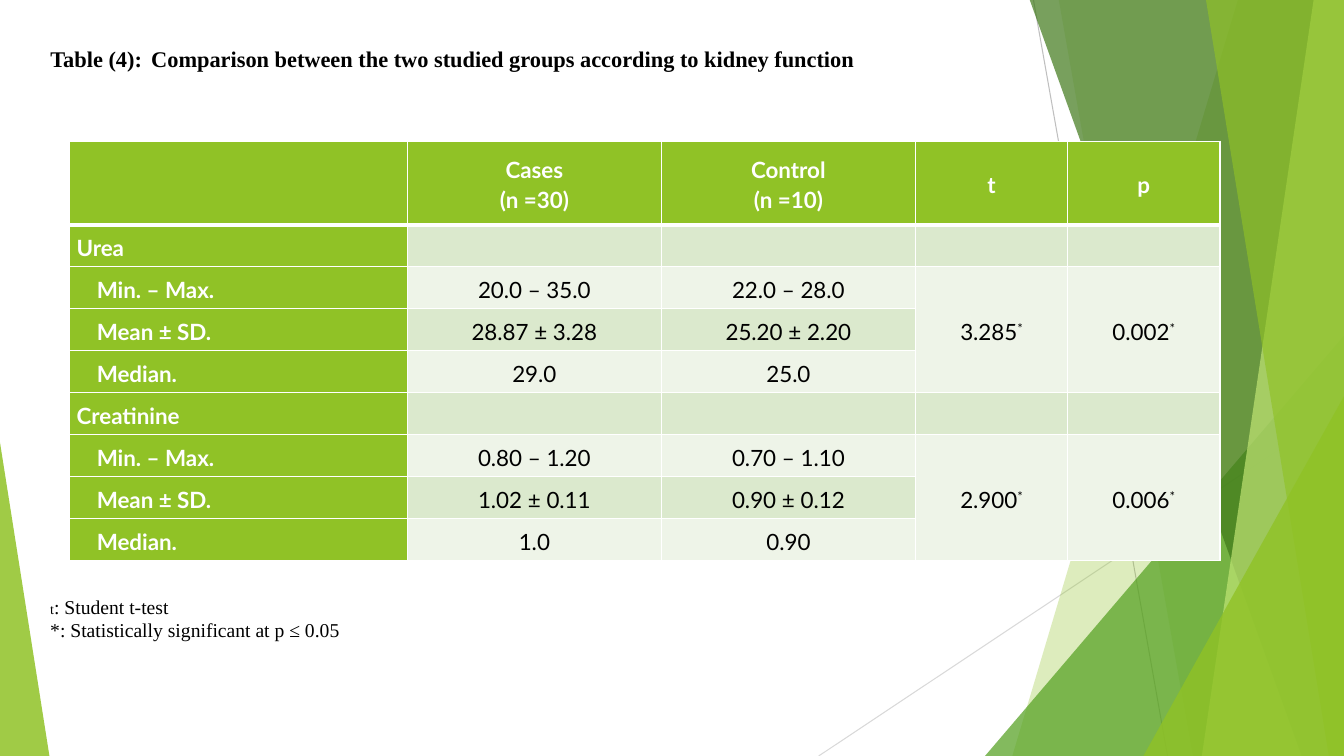
import pptx
import pptx.dml.color
import pptx.enum.shapes
import pptx.enum.text
import pptx.oxml
import pptx.oxml.ns
import pptx.util

Inches = pptx.util.Inches
Pt = pptx.util.Pt
ALIGN = pptx.enum.text.PP_ALIGN
MIDDLE = pptx.enum.text.MSO_ANCHOR.MIDDLE
SHAPES = pptx.enum.shapes.MSO_SHAPE

COLORS = {
    "green": "90C226", "leaf": "54A021", "forest": "3F7819", "lime": "C0E474",
    "band": "DBE9CD", "pale": "EEF4E8", "white": "FFFFFF", "black": "000000",
    "grey": "BFBFBF", "silver": "D9D9D9",
}
SERIF = {"name": "Times New Roman", "size": Pt(16), "bold": True}
NOTE = {"name": "Times New Roman", "size": Pt(14), "bold": False}
HEADING = {"name": "Lato", "size": Pt(16), "bold": True}
VALUE = {**HEADING, "bold": False}
CELL_SPACING = {"line_spacing": 1.15, "space_before": Pt(4), "space_after": Pt(2)}
CELL_FRAME = {
    "vertical_anchor": MIDDLE, "margin_left": Inches(0.07),
    "margin_right": Inches(0.07), "margin_top": 0, "margin_bottom": 0,
}


def apply(target, values):
    for name, value in values.items():
        setattr(target, name, value)


def rgb(color):
    return pptx.dml.color.RGBColor.from_string(COLORS[color])


class SlideBuilder:
    def __init__(self, page):
        self.page = page

    def line(self, start, end, color):
        connector = self.page.shapes.add_connector(
            pptx.enum.shapes.MSO_CONNECTOR.STRAIGHT,
            *(Inches(value) for value in (*start, *end)))
        connector.line.width = Pt(0.75)
        connector.line.color.rgb = rgb(color)
        pptx.oxml.ns.qn("a:effectLst")
        connector._element.spPr.append(pptx.oxml.parse_xml(
            f'<a:effectLst {pptx.oxml.ns.nsdecls("a")}/>'))

    def paint(self, shape, color, opacity):
        shape.shadow.inherit = False
        shape.fill.solid()
        shape.fill.fore_color.rgb = rgb(color)
        shape.line.fill.background()
        tint = shape._element.spPr.find(".//" + pptx.oxml.ns.qn("a:srgbClr"))
        tint.append(pptx.oxml.parse_xml(
            f'<a:alpha {pptx.oxml.ns.nsdecls("a")} val="{opacity * 1000}"/>'))

    def ribbon(self, top_left, bottom_left, color, opacity):
        """Full-height panel that runs to the right edge of the page."""
        corners = [(top_left, -0.01), (13.33, -0.01), (13.33, 7.5), (bottom_left, 7.5)]
        points = [(Inches(x), Inches(y)) for x, y in corners]
        outline = self.page.shapes.build_freeform(*points[0], scale=1.0)
        outline.add_line_segments(points[1:], close=True)
        self.paint(outline.convert_to_shape(), color, opacity)

    def triangle(self, area, peak, color, opacity):
        shape = self.page.shapes.add_shape(
            SHAPES.ISOSCELES_TRIANGLE, *(Inches(value) for value in area))
        shape.adjustments[0] = peak
        self.paint(shape, color, opacity)

    def span(self, para, text, style, color):
        span = para.add_run()
        span.text = text
        apply(span.font, style)
        span.font.color.rgb = rgb(color)
        return span

    def title(self, text, area):
        box = self.page.shapes.title
        apply(box, dict(zip(("left", "top", "width", "height"), map(Inches, area))))
        apply(box.text_frame, {"vertical_anchor": MIDDLE, "word_wrap": True,
                               "auto_size": pptx.enum.text.MSO_AUTO_SIZE.NONE})
        para = box.text_frame.paragraphs[0]
        para.alignment = ALIGN.LEFT
        self.span(para, text, SERIF, "black")

    def notes(self, lines, area):
        frame = self.page.shapes.add_textbox(*map(Inches, area)).text_frame
        apply(frame, {"word_wrap": True, "margin_top": 0, "margin_bottom": 0})
        for number, spans in enumerate(lines):
            para = frame.add_paragraph() if number else frame.paragraphs[0]
            for text, size in spans:
                self.span(para, text, {**NOTE, "size": Pt(size)}, "black")

    def borders(self, cell, widths):
        for index, (side, width) in enumerate(widths.items()):
            cell._tc.get_or_add_tcPr().insert(index, pptx.oxml.parse_xml(
                f'<a:{side} {pptx.oxml.ns.nsdecls("a")} w="{Pt(width)}"><a:solidFill>'
                f'<a:srgbClr val="{COLORS["white"]}"/></a:solidFill></a:{side}>'))

    def cell(self, cell, text, row, column):
        heading = row == 0 or column == 0
        color = "green" if heading else "band" if row % 2 else "pale"
        cell.fill.solid()
        cell.fill.fore_color.rgb = rgb(color)
        apply(cell, CELL_FRAME)
        self.borders(cell, {"lnL": 1, "lnR": 1, "lnT": 3 if row == 1 else 1,
                            "lnB": 3 if row == 0 else 1})
        para = cell.text_frame.paragraphs[0]
        apply(para, CELL_SPACING)
        para.alignment = ALIGN.LEFT if column == 0 else ALIGN.CENTER
        if column == 0 and row % 4 != 1:
            para._p.get_or_add_pPr().set("marL", str(Inches(0.2)))
        style, ink = (HEADING, "white") if heading else (VALUE, "black")
        for number, part in enumerate(text.split("\n") if text else []):
            if number:
                para.add_line_break()
            self.span(para, part.rstrip("*"), style, ink)
            if part.endswith("*"):
                star = self.span(para, "*", style, ink)
                star._r.get_or_add_rPr().set("baseline", "30000")

    def table(self, rows, corner, widths, heights, merges):
        area = (*corner, sum(widths), sum(heights))
        table = self.page.shapes.add_table(
            len(rows), len(widths), *map(Inches, area)).table
        for column, width in zip(table.columns, widths):
            column.width = Inches(width)
        for table_row, height in zip(table.rows, heights):
            table_row.height = Inches(height)
        for row, texts in enumerate(rows):
            for column, text in enumerate(texts):
                self.cell(table.cell(row, column), text, row, column)
        for first, last, column in merges:
            table.cell(first, column).merge(table.cell(last, column))


def main():
    deck = pptx.Presentation()
    deck.slide_width, deck.slide_height = Inches(13.33), Inches(7.5)
    builder = SlideBuilder(deck.slides.add_slide(deck.slide_layouts[5]))

    # Green backdrop
    builder.line((10.25, 0), (11.58, 7.5), "grey")
    builder.line((13.33, 4.03), (8.12, 7.5), "silver")
    builder.ribbon(12.28, 10.04, "green", 30)
    builder.ribbon(10.5, 11.83, "green", 20)
    builder.triangle((9.77, 3.33, 3.56, 4.17), 1, "leaf", 72)
    builder.ribbon(10.21, 12.91, "forest", 70)
    builder.ribbon(13.03, 11.92, "lime", 70)
    builder.ribbon(11.96, 13.18, "green", 65)
    builder.triangle((11.34, 3.93, 1.99, 3.57), 1, "green", 80)
    builder.triangle((0, 4.39, 0.49, 3.11), 0, "green", 85)

    # Kidney function table
    rows = [
        ("", "Cases\n(n =30)", "Control\n(n =10)", "t", "p"),
        ("Urea", "", "", "", ""),
        ("Min. – Max.", "20.0 – 35.0", "22.0 – 28.0", "3.285*", "0.002*"),
        ("Mean ± SD.", "28.87 ± 3.28", "25.20 ± 2.20", "", ""),
        ("Median.", "29.0", "25.0", "", ""),
        ("Creatinine", "", "", "", ""),
        ("Min. – Max.", "0.80 – 1.20", "0.70 – 1.10", "2.900*", "0.006*"),
        ("Mean ± SD.", "1.02 ± 0.11", "0.90 ± 0.12", "", ""),
        ("Median.", "1.0", "0.90", "", ""),
    ]
    merges = [(first, first + 2, column) for first in (2, 6) for column in (3, 4)]
    builder.table(rows, (0.69, 1.4), [3.35, 2.52, 2.52, 1.51, 1.51],
                  [0.83] + [3.33 / 8] * 8, merges)

    # Title and notes
    builder.title("Table (4):\tComparison between the two studied groups "
                  "according to kidney function", (0.4, 0.35, 9.5, 0.46))
    builder.notes([[("t", 10), (": Student t-test", 14)],
                   [("*: Statistically significant at p ≤ 0.05", 14)]],
                  (0.4, 5.9, 6, 0.46))

    deck.save("out.pptx")


if __name__ == "__main__":
    main()
